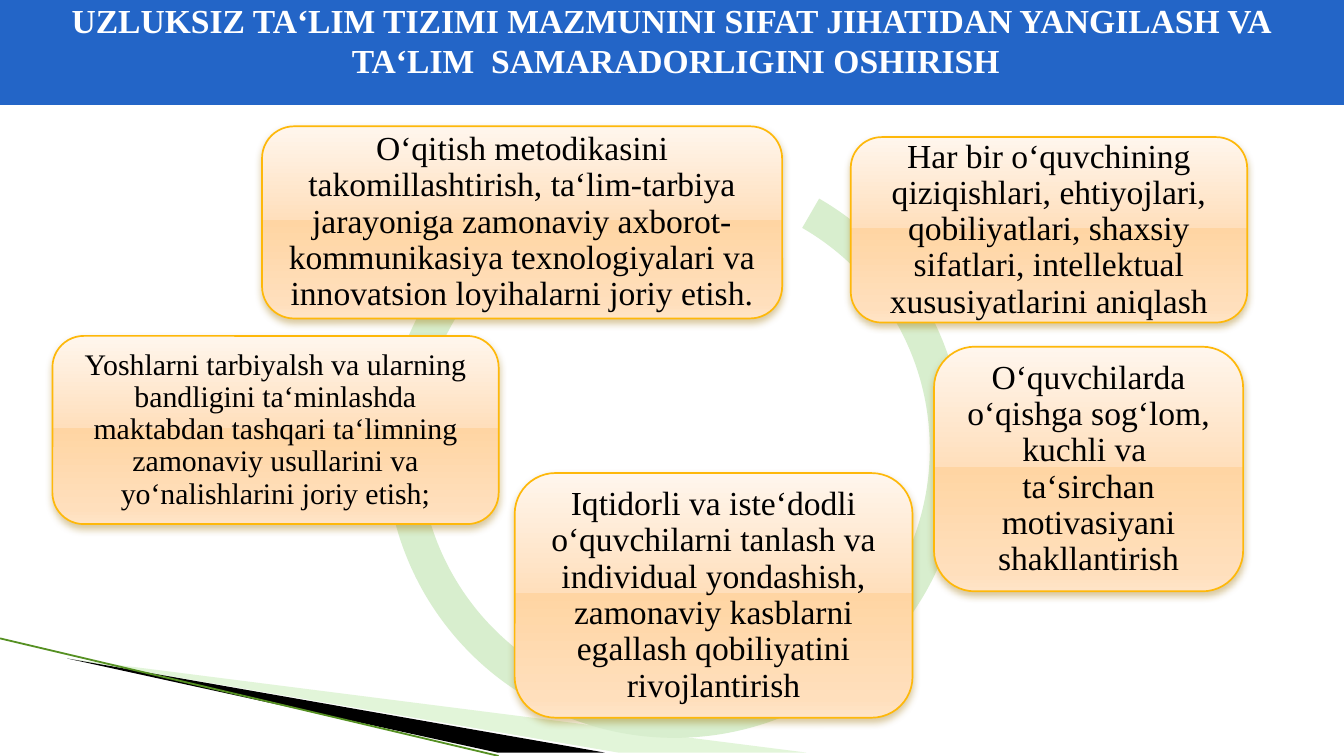
from dataclasses import dataclass

from lxml import etree
from pptx import Presentation
from pptx.dml.color import RGBColor
from pptx.enum.shapes import MSO_CONNECTOR, MSO_SHAPE
from pptx.enum.text import MSO_ANCHOR, PP_ALIGN
from pptx.oxml import parse_xml
from pptx.oxml.ns import nsdecls, qn
from pptx.util import Inches, Pt

ROUNDED = MSO_SHAPE.ROUNDED_RECTANGLE
RING = MSO_SHAPE.CIRCULAR_ARROW
STRAIGHT = MSO_CONNECTOR.STRAIGHT
CENTER = PP_ALIGN.CENTER
TOP, MIDDLE = MSO_ANCHOR.TOP, MSO_ANCHOR.MIDDLE
TITLE_ONLY = 5

# The page is a grid of square cells, 100 columns wide.
CELL = Inches(0.1)
COLUMNS, ROWS = 100, 56.25
DEGREE = 0.6  # one degree as a shape adjustment


@dataclass(frozen=True)
class Theme:
    font: str = "Times New Roman"
    title_size: int = 18
    card_size: int = 18
    small_size: int = 16
    banner: str = "2365C7"
    title: str = "FFFFFF"
    text: str = "000000"
    ring: str = "D8EECE"
    card_line: str = "FEB80A"
    card_shadow: str = "9C7000"
    card_stops: tuple = ((0, "FFF6ED"), (49, "FFDFBC"), (49, "FFD5A3"),
                         (92, "FFDFBC"), (100, "FFE4C7"))
    pale_wedge: str = "B8E7A1"
    dark_wedge: str = "000000"
    wedge_line: str = "559022"


THEME = Theme()

TITLE_LINES = (
    "UZLUKSIZ TA‘LIM TIZIMI MAZMUNINI SIFAT JIHATIDAN YANGILASH VA",
    " TA‘LIM  SAMARADORLIGINI OSHIRISH",
)

# Box in columns and rows (left, top, width, height), type size, wording
CARDS = (
    ((63.3, 10.2, 29.5, 13.8), THEME.card_size,
     "Har bir o‘quvchining qiziqishlari, ehtiyojlari, qobiliyatlari, "
     "shaxsiy sifatlari, intellektual xususiyatlarini aniqlash"),
    ((69.5, 25.8, 23, 18.2), THEME.card_size,
     "O‘quvchilarda o‘qishga sog‘lom, kuchli va  ta‘sirchan motivasiyani "
     "shakllantirish"),
    ((38.3, 35.2, 29.6, 18.2), THEME.card_size,
     "Iqtidorli va iste‘dodli o‘quvchilarni tanlash va individual "
     "yondashish, zamonaviy kasblarni egallash qobiliyatini rivojlantirish"),
    ((3.9, 25, 33.2, 14), THEME.small_size,
     "Yoshlarni tarbiyalsh va ularning bandligini ta‘minlashda maktabdan "
     "tashqari ta‘limning zamonaviy usullarini va yo‘nalishlarini joriy "
     "etish;"),
    ((19.5, 9.4, 38.7, 14.3), THEME.card_size,
     "O‘qitish metodikasini takomillashtirish, ta‘lim-tarbiya jarayoniga "
     "zamonaviy axborot- kommunikasiya texnologiyalari va innovatsion "
     "loyihalarni joriy etish."),
)


def cells(*counts):
    return [round(count * CELL) for count in counts]


def paint(shape, color):
    shape.fill.solid()
    shape.fill.fore_color.rgb = RGBColor.from_string(color)


def set_text(frame, lines, size, color, anchor, inset, bold=False):
    frame.word_wrap = True
    frame.vertical_anchor = anchor
    frame.margin_left = frame.margin_right = Inches(inset)
    frame.margin_top = frame.margin_bottom = Inches(inset)
    frame.text = "\n".join(lines)
    for para in frame.paragraphs:
        para.alignment = CENTER
        for span in para.runs:
            span.font.name = THEME.font
            span.font.size = Pt(size)
            span.font.bold = bold
            span.font.color.rgb = RGBColor.from_string(color)


def add_wedge(page, points, color, opacity=100):
    builder = page.shapes.build_freeform(*points[0], scale=CELL)
    builder.add_line_segments(points[1:], close=True)
    wedge = builder.convert_to_shape()
    wedge.shadow.inherit = False
    wedge.line.fill.background()
    paint(wedge, color)
    tint = wedge.fill._xPr.find(".//" + qn("a:srgbClr"))
    etree.SubElement(tint, qn("a:alpha")).set("val", str(opacity * 1000))


def add_corner(page, left, top, width, height):
    """Two wedges and a thin line fanning out from the left edge."""
    bottom = top + height
    tip = (left + 5.4, top + 1.25)
    add_wedge(page, [tip, (left + width, bottom), (left + 45.6, bottom)],
              THEME.pale_wedge, opacity=40)
    add_wedge(page, [tip, (left + 45.4, bottom), (left + 37.1, bottom)],
              THEME.dark_wedge)
    edge = page.shapes.add_connector(
        STRAIGHT, *cells(left, top, left + 37.1, bottom))
    edge.line.color.rgb = RGBColor.from_string(THEME.wedge_line)
    edge.line.width = Pt(0.95)
    etree.SubElement(edge._element.spPr, qn("a:effectLst"))


def add_banner(page, *box):
    banner = page.shapes.title
    banner.left, banner.top, banner.width, banner.height = cells(*box)
    paint(banner, THEME.banner)
    set_text(banner.text_frame, TITLE_LINES, THEME.title_size, THEME.title,
             TOP, inset=0, bold=True)
    for para in banner.text_frame.paragraphs:
        para.line_spacing = 1.0


def add_ring(page, *box):
    ring = page.shapes.add_shape(RING, *cells(*box))
    ring.shadow.inherit = False
    ring.line.fill.background()
    paint(ring, THEME.ring)
    thickness, head_angle, end, start, head = 0.055, 3.3, 248, 300, 0.058
    settings = (thickness, head_angle * DEGREE, end * DEGREE,
                start * DEGREE, head)
    for index, value in enumerate(settings):
        ring.adjustments[index] = value


def add_card(page, box, size, wording):
    card = page.shapes.add_shape(ROUNDED, *cells(*box))
    card.line.color.rgb = RGBColor.from_string(THEME.card_line)
    card.line.width = Pt(0.9)
    stops = "".join(
        f'<a:gs pos="{place * 1000}"><a:srgbClr val="{color}"/></a:gs>'
        for place, color in THEME.card_stops)
    gradient = parse_xml(
        f'<a:gradFill {nsdecls("a")} rotWithShape="1"><a:gsLst>{stops}'
        '</a:gsLst><a:lin ang="5400000" scaled="0"/></a:gradFill>')
    shadow = parse_xml(
        f'<a:effectLst {nsdecls("a")}><a:outerShdw blurRad="{Pt(4)}" '
        f'dist="{Pt(2)}" dir="5400000" rotWithShape="0">'
        f'<a:srgbClr val="{THEME.card_shadow}"><a:alpha val="38000"/>'
        '</a:srgbClr></a:outerShdw></a:effectLst>')
    properties = card._element.spPr
    properties.find(qn("a:prstGeom")).addnext(gradient)
    properties.append(shadow)
    set_text(card.text_frame, [wording], size, THEME.text, MIDDLE, inset=0.07)
    card.text_frame.paragraphs[0].line_spacing = 0.9


def main():
    deck = Presentation()
    deck.slide_width, deck.slide_height = cells(COLUMNS, ROWS)
    page = deck.slides.add_slide(deck.slide_layouts[TITLE_ONLY])
    add_corner(page, 0, 47.5, 59.5, ROWS - 47.5)
    add_banner(page, 0, 0, COLUMNS, 7.8)
    add_ring(page, 27.3, 10.5, 45.8, 45.8)
    for box, size, wording in CARDS:
        add_card(page, box, size, wording)
    deck.save("out.pptx")


if __name__ == "__main__":
    main()
